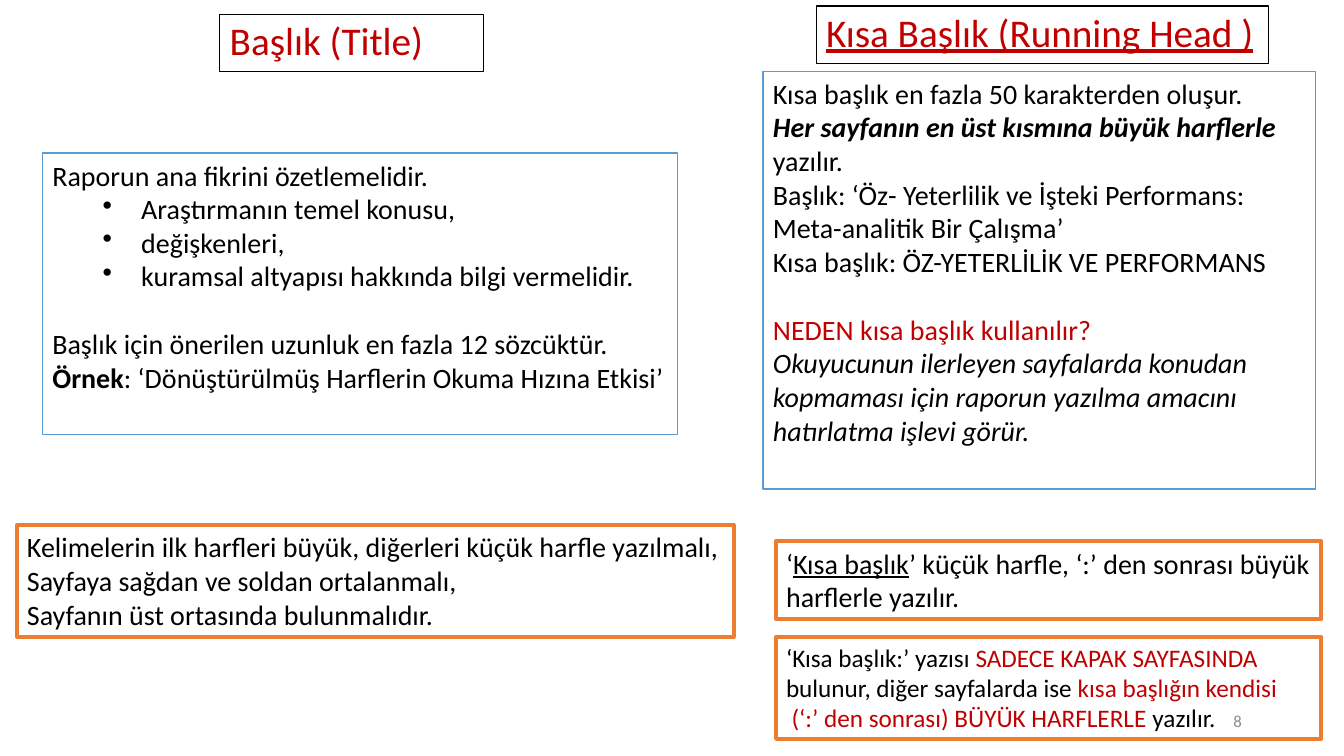
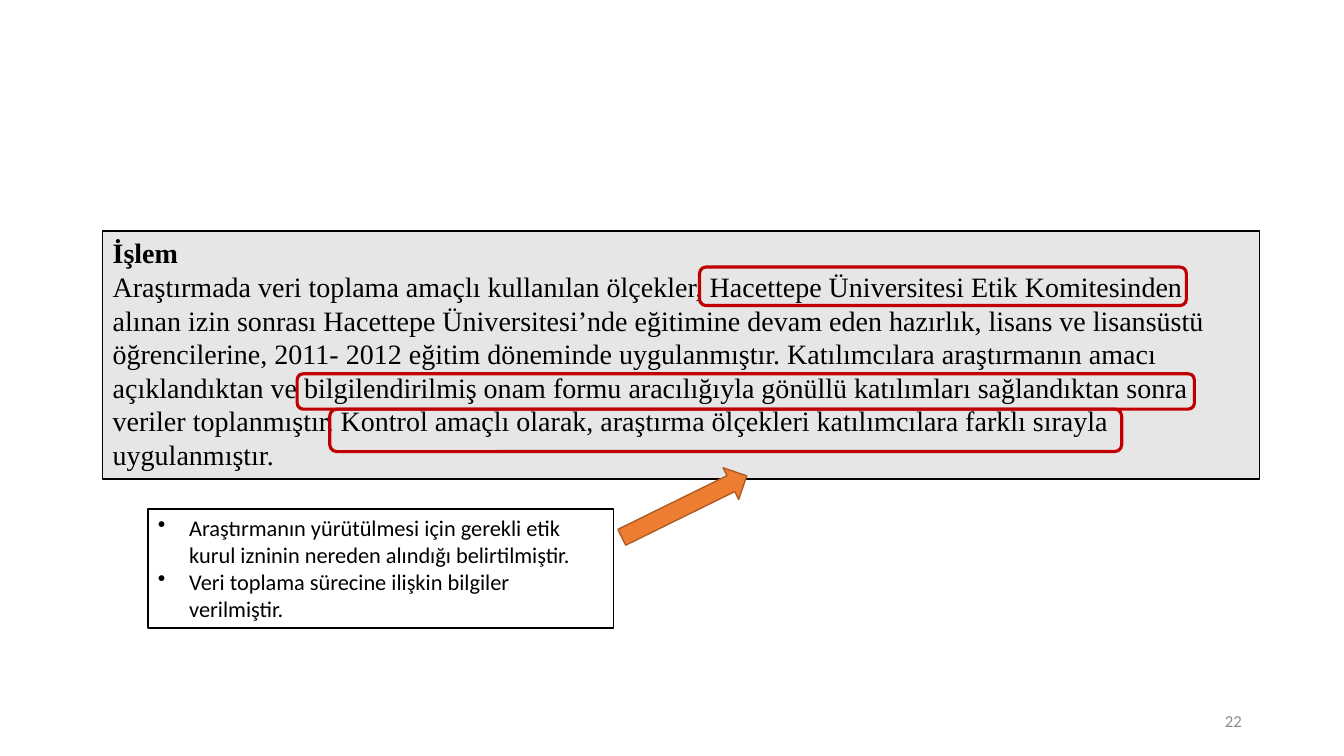
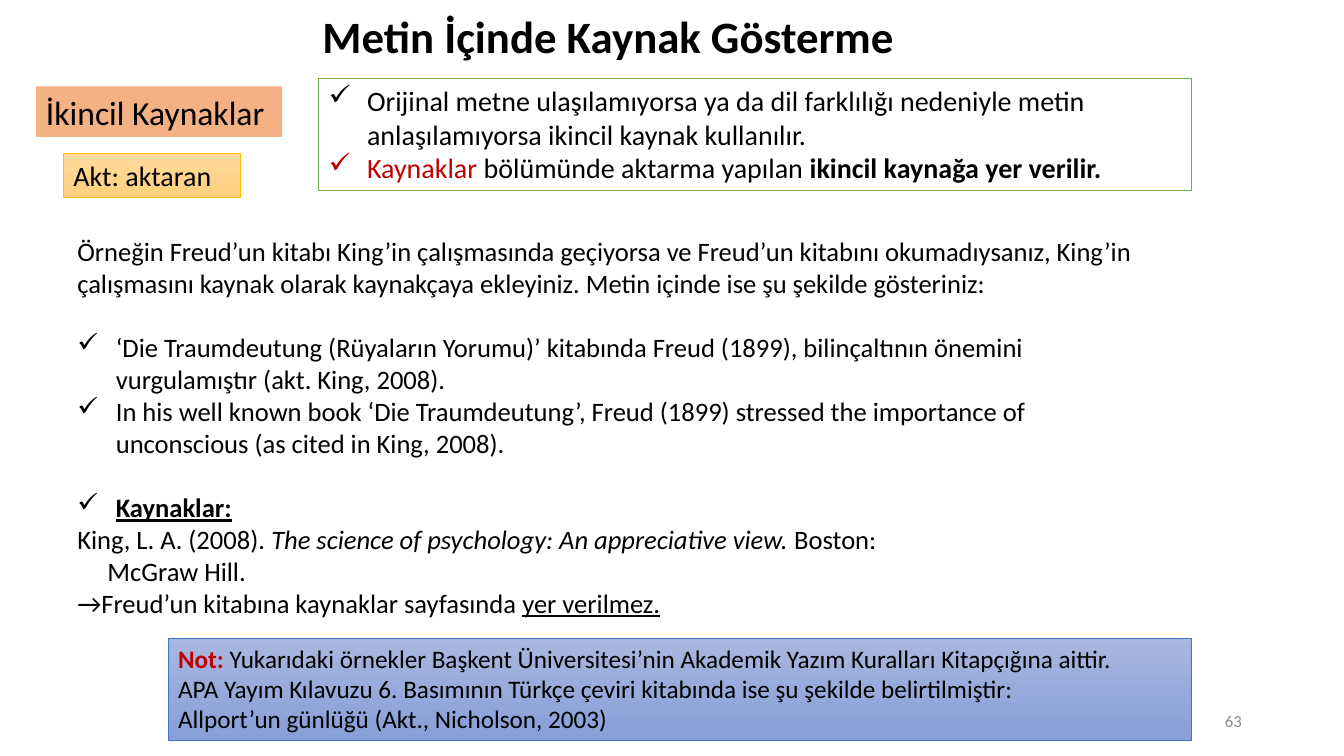
from dataclasses import dataclass

from lxml.etree import SubElement
from pptx import Presentation
from pptx.dml.color import RGBColor
from pptx.enum.shapes import MSO_SHAPE
from pptx.enum.text import MSO_ANCHOR, PP_ALIGN
from pptx.oxml.ns import qn
from pptx.util import Cm, Pt

BLACK, WHITE, RED, GREY = "000000", "FFFFFF", "C00000", "8C8C8C"
BLUE, ORANGE, GREEN = "5B9BD5", "ED7D31", "70AD47"
SANS, SERIF = "Calibri", "Times New Roman"
HANGING = 0.97


@dataclass
class Run:
    """Text with style letters: b bold, i italic, u underline, r red."""
    text: str
    style: str = ""


@dataclass
class Para:
    runs: tuple
    bullet: str = ""
    indent: float = 0
    hanging: float = 0
    gap: float = 0


def para(*runs, **layout):
    return Para(tuple(r if isinstance(r, Run) else Run(r) for r in runs), **layout)


def item(*runs, bullet="✓", indent=HANGING, hanging=HANGING, gap=0):
    return para(*runs, bullet=bullet, indent=indent, hanging=hanging, gap=gap)


def rgb(color):
    return RGBColor.from_string(color)


def paint(shape, fill=None, line=None, width=1.0):
    """Fill with one colour, a (top, bottom) gradient, or nothing."""
    shape.shadow.inherit = False
    if fill is None:
        shape.fill.background()
    elif isinstance(fill, tuple):
        shape.fill.gradient()
        shape.fill.gradient_angle = 270
        for stop, color in zip(shape.fill.gradient_stops, fill):
            stop.color.rgb = rgb(color)
    else:
        shape.fill.solid()
        shape.fill.fore_color.rgb = rgb(fill)
    if line:
        shape.line.color.rgb = rgb(line)
        shape.line.width = Pt(width)
    else:
        shape.line.fill.background()


def add_figure(s, kind, at, **look):
    shape = s.shapes.add_shape(kind, *map(Cm, at))
    paint(shape, **look)
    return shape


def write(tf, paras, size, font=SANS, color=BLACK, align=PP_ALIGN.LEFT,
          anchor=MSO_ANCHOR.TOP, spacing=None):
    tf.word_wrap = True
    tf.vertical_anchor = anchor
    for n, content in enumerate(paras):
        p = tf.add_paragraph() if n else tf.paragraphs[0]
        p.alignment = align
        pPr = p._p.get_or_add_pPr()
        if content.indent:
            pPr.set("marL", str(Cm(content.indent)))
            pPr.set("indent", str(-Cm(content.hanging)))
        if content.bullet:
            SubElement(pPr, qn("a:buChar")).set("char", content.bullet)
        if content.gap:
            p.space_before = Pt(content.gap)
        if spacing:
            p.line_spacing = spacing
        for part in content.runs:
            r = p.add_run()
            r.text = part.text
            r.font.name, r.font.size = font, Pt(size)
            r.font.bold = "b" in part.style
            r.font.italic = "i" in part.style
            r.font.underline = "u" in part.style
            r.font.color.rgb = rgb(RED if "r" in part.style else color)


def add_box(s, at, paras, size=20, fill=WHITE, line=None, width=1.0, font=SANS):
    box = add_figure(s, MSO_SHAPE.RECTANGLE, at, fill=fill, line=line, width=width)
    write(box.text_frame, paras, size, font)


def add_title(s, at, run, size, align=PP_ALIGN.LEFT, line=None):
    box = s.shapes.add_textbox(*map(Cm, at))
    paint(box, line=line)
    write(box.text_frame, [para(run)], size, align=align,
          anchor=MSO_ANCHOR.MIDDLE, spacing=0.9)


def add_page_number(s, number):
    box = s.shapes.add_textbox(Cm(23.93), Cm(17.65), Cm(7.62), Cm(1.02))
    write(box.text_frame, [para(str(number))], 12, color=GREY,
          align=PP_ALIGN.RIGHT, anchor=MSO_ANCHOR.MIDDLE)


def build_headings(s):
    add_title(s, (5.54, 0.36, 6.65, 1.45), Run("Başlık (Title)", "r"), 28, line=BLACK)
    topics = ("Araştırmanın temel konusu,", "değişkenleri,",
              "kuramsal altyapısı hakkında bilgi vermelidir.")
    add_box(s, (1.07, 3.86, 16, 7.09), [
        para("Raporun ana fikrini özetlemelidir."),
        *(item(topic, bullet="•", indent=2.24) for topic in topics),
        para("Başlık için önerilen uzunluk en fazla 12 sözcüktür.", gap=24.4),
        para(Run("Örnek", "b"), ": ‘Dönüştürülmüş Harflerin Okuma Hızına Etkisi’"),
    ], line=BLUE)
    add_box(s, (0.43, 13.23, 18.06, 2.82), [
        para("Kelimelerin ilk harfleri büyük, diğerleri küçük harfle yazılmalı,"),
        para("Sayfaya sağdan ve soldan ortalanmalı,"),
        para("Sayfanın üst ortasında bulunmalıdır."),
    ], line=ORANGE, width=3)

    add_title(s, (20.57, 0.15, 11.4, 1.45), Run("Kısa Başlık (Running Head )", "ru"),
              28, line=BLACK)
    add_box(s, (19.23, 1.8, 13.92, 10.52), [
        para("Kısa başlık en fazla 50 karakterden oluşur."),
        para(Run("Her sayfanın en üst kısmına büyük harflerle ", "bi"), "yazılır."),
        para("Başlık: ‘Öz- Yeterlilik ve İşteki Performans: "
             "Meta-analitik Bir Çalışma’"),
        para("Kısa başlık: ÖZ-YETERLİLİK VE PERFORMANS"),
        para(Run("NEDEN kısa başlık kullanılır?", "r"), gap=24.4),
        para(Run("Okuyucunun ilerleyen sayfalarda konudan kopmaması için raporun "
                 "yazılma amacını hatırlatma işlevi görür.", "i")),
    ], line=BLUE)
    add_box(s, (19.56, 13.64, 13.74, 1.96), [
        para("‘", Run("Kısa başlık", "u"),
             "’ küçük harfle, ‘:’ den sonrası büyük harflerle yazılır."),
    ], line=ORANGE, width=3)
    add_box(s, (19.56, 16.05, 13.74, 2.57), [
        para("‘Kısa başlık:’ yazısı ", Run("SADECE KAPAK SAYFASINDA ", "r"),
             "bulunur, diğer sayfalarda ise ", Run("kısa başlığın kendisi", "r")),
        para(Run("(‘:’ den sonrası) BÜYÜK HARFLERLE ", "r"), "yazılır.", indent=0.14),
    ], size=18, line=ORANGE, width=3)


def build_procedure(s):
    add_box(s, (2.59, 5.82, 29.16, 6.25), [
        para(Run("İşlem", "b")),
        para("Araştırmada veri toplama amaçlı kullanılan ölçekler, Hacettepe "
             "Üniversitesi Etik Komitesinden alınan izin sonrası Hacettepe "
             "Üniversitesi’nde eğitimine devam eden hazırlık, lisans ve lisansüstü "
             "öğrencilerine, 2011- 2012 eğitim döneminde uygulanmıştır. "
             "Katılımcılara araştırmanın amacı açıklandıktan ve bilgilendirilmiş "
             "onam formu aracılığıyla gönüllü katılımları sağlandıktan sonra "
             "veriler toplanmıştır. Kontrol amaçlı olarak, araştırma ölçekleri "
             "katılımcılara farklı sırayla uygulanmıştır."),
    ], fill="E7E6E6", line=BLACK, font=SERIF)
    remarks = ("Araştırmanın yürütülmesi için gerekli etik kurul izninin nereden "
               "alındığı belirtilmiştir.",
               "Veri toplama sürecine ilişkin bilgiler verilmiştir.")
    add_box(s, (3.73, 12.83, 11.73, 3),
            [item(t, bullet="•", indent=0.79, hanging=0.79) for t in remarks],
            size=16, line=BLACK)
    arrow = add_figure(s, MSO_SHAPE.RIGHT_ARROW, (15.49, 12.32, 3.51, 0.89),
                       fill=ORANGE, line="AF5C24")
    arrow.rotation = 333.8
    for mark in ((17.63, 6.73, 12.27, 0.97), (7.49, 9.42, 22.61, 0.89),
                 (8.31, 10.31, 19.96, 1.07)):
        add_figure(s, MSO_SHAPE.ROUNDED_RECTANGLE, mark, line=RED, width=2.25)


def build_citations(s):
    add_box(s, (0.91, 2.18, 6.2, 1.27), [para("İkincil Kaynaklar")],
            size=24, fill="F4B183")
    add_title(s, (5.64, 0, 19.38, 1.96), Run("Metin İçinde Kaynak Gösterme", "b"),
              32, align=PP_ALIGN.CENTER)
    add_box(s, (8.03, 1.98, 22, 2.82), [
        item("Orijinal metne ulaşılamıyorsa ya da dil farklılığı nedeniyle metin "
             "anlaşılamıyorsa ikincil kaynak kullanılır."),
        item(Run("Kaynaklar", "r"), " bölümünde aktarma yapılan ",
             Run("ikincil kaynağa yer verilir.", "b")),
    ], line=GREEN)
    add_box(s, (1.7, 5.79, 27.79, 10.01), [
        para("Örneğin Freud’un kitabı King’in çalışmasında geçiyorsa ve Freud’un "
             "kitabını okumadıysanız, King’in çalışmasını kaynak olarak kaynakçaya "
             "ekleyiniz. Metin içinde ise şu şekilde gösteriniz:"),
        item("‘Die Traumdeutung (Rüyaların Yorumu)’ kitabında Freud (1899), "
             "bilinçaltının önemini vurgulamıştır (akt. King, 2008).", gap=23.2),
        item("In his well known book ‘Die Traumdeutung’, Freud (1899) stressed the "
             "importance of unconscious (as cited in King, 2008)."),
        item(Run("Kaynaklar:", "bu"), gap=23.2),
        para("King, L. A. (2008). ",
             Run("The science of psychology: An appreciative view. ", "i"), "Boston:"),
        para("McGraw Hill.", indent=0.76),
        para("→Freud’un kitabına kaynaklar sayfasında ", Run("yer verilmez.", "u")),
    ], size=19)
    add_box(s, (1.6, 3.86, 4.47, 1.12), [para("Akt: aktaran")],
            fill=("FFDB9E", "FFD07C"), line="FFC000", width=0.5)
    add_box(s, (4.24, 16.08, 25.78, 2.57), [
        para(Run("Not: ", "br"), "Yukarıdaki örnekler Başkent Üniversitesi’nin "
             "Akademik Yazım Kuralları Kitapçığına aittir."),
        para("APA Yayım Kılavuzu 6. Basımının Türkçe çeviri kitabında ise şu "
             "şekilde belirtilmiştir:"),
        para("Allport’un günlüğü (Akt., Nicholson, 2003)"),
    ], size=18, fill=("A8B7DF", "889ED7"), line="4472C4", width=0.5)


def main():
    prs = Presentation()
    prs.slide_width, prs.slide_height = Cm(33.87), Cm(19.05)
    for build, number in ((build_headings, 8), (build_procedure, 22),
                          (build_citations, 63)):
        s = prs.slides.add_slide(prs.slide_layouts[6])
        build(s)
        add_page_number(s, number)
    prs.save("out.pptx")


if __name__ == "__main__":
    main()
